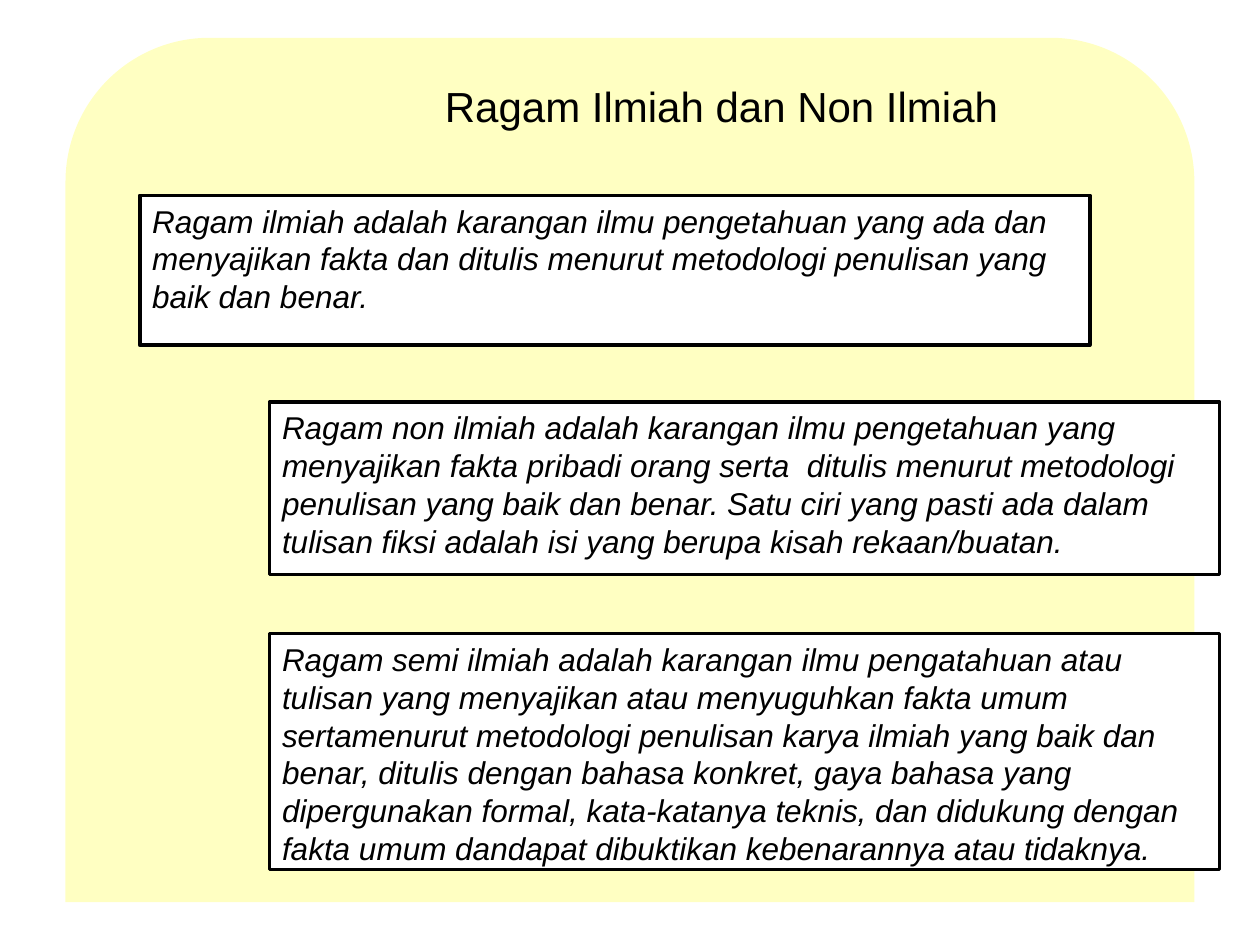
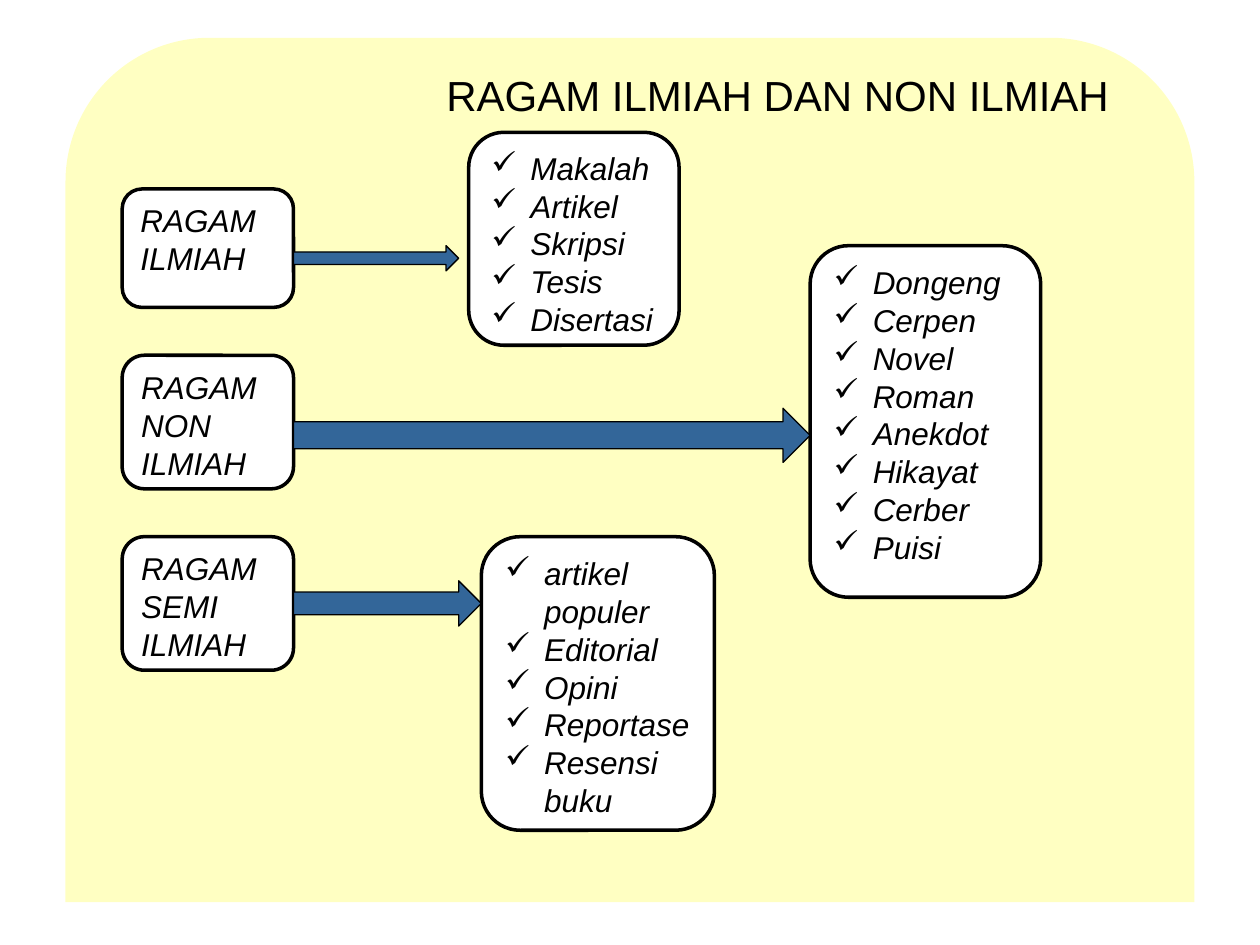
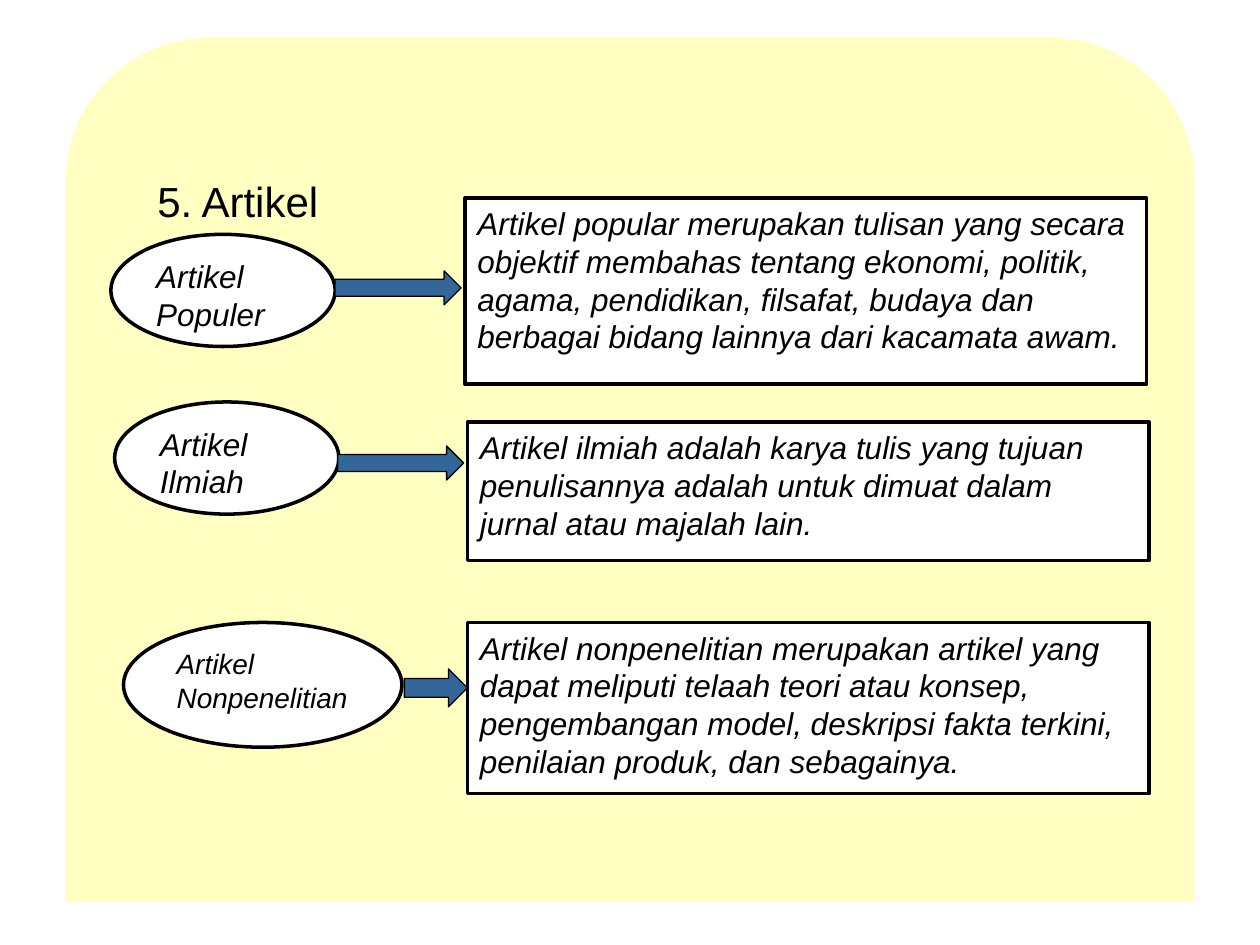
from dataclasses import dataclass

from lxml.etree import SubElement
from pptx import Presentation
from pptx.dml.color import RGBColor
from pptx.enum.shapes import MSO_SHAPE
from pptx.enum.text import MSO_ANCHOR, PP_ALIGN
from pptx.oxml.ns import qn
from pptx.util import Inches, Pt


@dataclass(frozen=True)
class Theme:
    font: str = "Arial"
    ink: RGBColor = RGBColor(0, 0, 0)
    paper: RGBColor = RGBColor(0xFF, 0xFF, 0xFF)
    band: RGBColor = RGBColor(0xFF, 0xFF, 0x00)
    band_alpha: int = 24
    arrow: RGBColor = RGBColor(0x33, 0x66, 0x99)
    title: int = 24
    body: int = 18
    small: int = 16
    outline: float = 2
    thin: float = 0.75
    bullet: str = "✓"
    hanging: float = 0.31


class Deck:
    """Holds the theme and the slide being built."""

    def __init__(self, theme):
        self.theme = theme
        self.prs = Presentation()
        self.prs.slide_width, self.prs.slide_height = Inches(10), Inches(7.5)
        self.s = None

    def new_slide(self):
        self.s = self.prs.slides.add_slide(self.prs.slide_layouts[6])
        sp = self.shape(MSO_SHAPE.ROUND_2_SAME_RECTANGLE, 0.52, 0.3, 8.96, 6.86,
                        self.theme.band)
        color = sp._element.spPr.find(qn("a:solidFill"))[0]
        SubElement(color, qn("a:alpha"), val=str(self.theme.band_alpha * 1000))

    def shape(self, kind, left, top, width, height, fill, line=None):
        sp = self.s.shapes.add_shape(kind, *map(Inches, (left, top, width, height)))
        sp.shadow.inherit = False
        sp.fill.solid()
        sp.fill.fore_color.rgb = fill
        if line is None:
            sp.line.fill.background()
        else:
            sp.line.color.rgb = self.theme.ink
            sp.line.width = Pt(line)
        return sp

    def text(self, sp, lines, size, align=PP_ALIGN.LEFT, italic=True, bullets=False):
        tf = sp.text_frame
        tf.word_wrap = True
        tf.vertical_anchor = MSO_ANCHOR.TOP
        for i, line in enumerate(lines):
            p = tf.add_paragraph() if i else tf.paragraphs[0]
            p.alignment = align
            if bullets:
                self.bullet(p)
            r = p.add_run()
            r.text = line
            r.font.color.rgb = self.theme.ink
            look = {"name": self.theme.font, "size": Pt(size), "italic": italic}
            for name, value in look.items():
                setattr(r.font, name, value)

    def bullet(self, p):
        pPr = p._p.get_or_add_pPr()
        indent = Inches(self.theme.hanging)
        pPr.set("marL", str(indent))
        pPr.set("indent", str(-indent))
        SubElement(pPr, qn("a:buChar"), char=self.theme.bullet)

    def title(self, text, left, top, width=6.91, align=PP_ALIGN.RIGHT):
        sp = self.s.shapes.add_textbox(*map(Inches, (left, top, width, 0.5)))
        self.text(sp, [text], self.theme.title, align, italic=False)

    def box(self, kind, at, *lines, size=None, bullets=False):
        sp = self.shape(kind, *at, self.theme.paper, self.theme.outline)
        self.text(sp, lines, size or self.theme.body, bullets=bullets)

    def arrow(self, left, top, width, height):
        self.shape(MSO_SHAPE.RIGHT_ARROW, left, top, width, height,
                   self.theme.arrow, self.theme.thin)


def definitions(deck):
    deck.new_slide()
    deck.title("Ragam Ilmiah dan Non Ilmiah", 1.11, 0.59)
    for left, top, height, text in [
        (1.11, 1.55, 1.19,
         "Ragam ilmiah adalah karangan ilmu pengetahuan yang ada dan menyajikan "
         "fakta dan ditulis menurut metodologi penulisan yang baik dan benar."),
        (2.14, 3.19, 1.37,
         "Ragam non ilmiah adalah karangan ilmu pengetahuan yang menyajikan fakta "
         "pribadi orang serta  ditulis menurut metodologi penulisan yang baik dan "
         "benar. Satu ciri yang pasti ada dalam tulisan fiksi adalah isi yang "
         "berupa kisah rekaan/buatan."),
        (2.14, 5.03, 1.87,
         "Ragam semi ilmiah adalah karangan ilmu pengatahuan atau tulisan yang "
         "menyajikan atau menyuguhkan fakta umum sertamenurut metodologi penulisan "
         "karya ilmiah yang baik dan benar, ditulis dengan bahasa konkret, gaya "
         "bahasa yang dipergunakan formal, kata-katanya teknis, dan didukung dengan "
         "fakta umum dandapat dibuktikan kebenarannya atau tidaknya."),
    ]:
        deck.box(MSO_SHAPE.RECTANGLE, (left, top, 7.54, height), text)


def examples(deck):
    deck.new_slide()
    deck.title("RAGAM ILMIAH DAN NON ILMIAH", 1.99, 0.5)
    left, width = 0.97, 1.36
    # Each row: genre, its top and height, list place, list items, arrow top, size
    for genre, top, height, list_at, items, arrow in [
        ("RAGAM ILMIAH", 1.5, 0.94, (3.72, 1.05, 1.67, 1.69),
         ["Makalah", "Artikel", "Skripsi", "Tesis", "Disertasi"], (1.95, 1.31, 0.2)),
        ("RAGAM NON ILMIAH", 2.82, 1.06, (6.43, 1.95, 1.83, 2.79),
         ["Dongeng", "Cerpen", "Novel", "Roman", "Anekdot", "Hikayat", "Cerber",
          "Puisi"], (3.24, 4.1, 0.43)),
        ("RAGAM SEMI ILMIAH", 4.26, 1.06, (3.82, 4.26, 1.85, 2.33),
         ["artikel populer", "Editorial", "Opini", "Reportase", "Resensi buku"],
         (4.61, 1.49, 0.36)),
    ]:
        deck.box(MSO_SHAPE.ROUNDED_RECTANGLE, (left, top, width, height), genre)
        deck.box(MSO_SHAPE.ROUNDED_RECTANGLE, list_at, *items, bullets=True)
        deck.arrow(left + width, *arrow)


def articles(deck):
    deck.new_slide()
    deck.title("5. Artikel", 1.15, 1.34, 7.82, PP_ALIGN.LEFT)
    # Each row: article type, its size and place, description and place, arrow
    for name, size, oval_at, (left, top, height), text, arrow in [
        ("Artikel Populer", deck.theme.body, (0.88, 1.86, 1.78, 0.89),
         (3.69, 1.57, 1.48),
         "Artikel popular merupakan tulisan yang secara objektif membahas tentang "
         "ekonomi, politik, agama, pendidikan, filsafat, budaya dan berbagai bidang "
         "lainnya dari kacamata awam.", (2.66, 2.15, 1, 0.27)),
        ("Artikel Ilmiah", deck.theme.body, (0.91, 3.19, 1.78, 0.89),
         (3.71, 3.35, 1.1),
         "Artikel ilmiah adalah karya tulis yang tujuan penulisannya adalah untuk "
         "dimuat dalam jurnal atau majalah lain.", (2.68, 3.54, 1, 0.27)),
        ("Artikel Nonpenelitian", deck.theme.small, (0.98, 4.94, 2.21, 0.99),
         (3.71, 4.94, 1.36),
         "Artikel nonpenelitian merupakan artikel yang dapat meliputi telaah teori "
         "atau konsep, pengembangan model, deskripsi fakta terkini, penilaian "
         "produk, dan sebagainya.", (3.21, 5.31, 0.5, 0.3)),
    ]:
        deck.box(MSO_SHAPE.OVAL, oval_at, name, size=size)
        deck.box(MSO_SHAPE.RECTANGLE, (left, top, 5.41, height), text)
        deck.arrow(*arrow)


def main():
    deck = Deck(Theme())
    for build in (definitions, examples, articles):
        build(deck)
    deck.prs.save("out.pptx")


if __name__ == "__main__":
    main()
